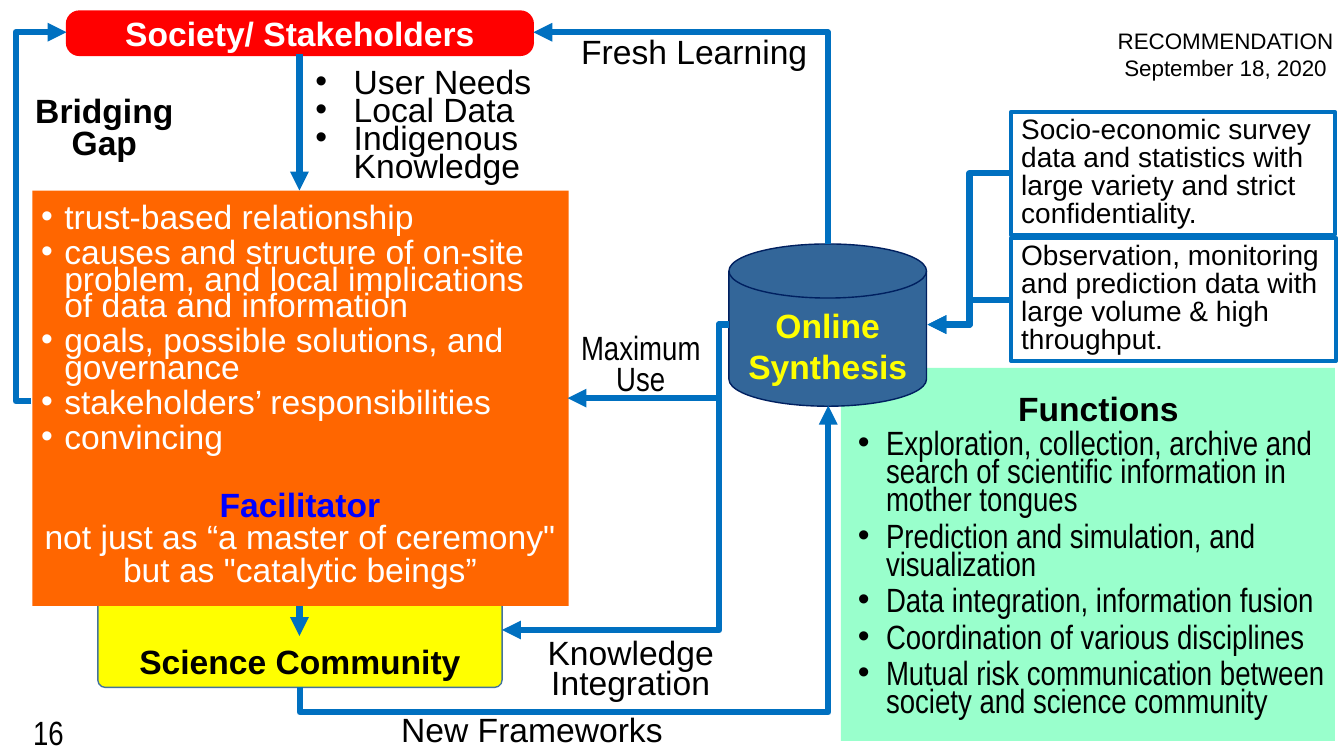
"""Build the slide on how society, science and online synthesis are connected by a facilitator."""
from dataclasses import dataclass
from typing import Optional

from lxml.etree import SubElement
from pptx import Presentation
from pptx.dml.color import RGBColor
from pptx.enum.shapes import MSO_CONNECTOR, MSO_SHAPE
from pptx.enum.text import MSO_ANCHOR, MSO_AUTO_SIZE, PP_ALIGN
from pptx.oxml.ns import qn
from pptx.util import Pt

EMU_PER_PX = 9144
COLORS = {
    "black": "000000", "white": "FFFFFF", "red": "FF0000", "yellow": "FFFF00",
    "orange": "FF6600", "mint": "99FFCC", "steel": "336699", "navy": "002060",
    "slate": "43739E", "arrow": "0070C0", "blue": "0000FF",
}
Frame = tuple[int, int, int, int]


@dataclass
class Line:
    text: str
    spacing: Optional[float] = None
    color: str = "black"
    bold: bool = False
    font: str = "Arial"
    size: int = 24
    align: PP_ALIGN = PP_ALIGN.CENTER
    indent: int = 0
    before: float = 0
    after: float = 0


@dataclass
class Panel:
    frame: Frame
    kind: MSO_SHAPE = MSO_SHAPE.RECTANGLE
    fill: Optional[str] = None
    outline: Optional[str] = None
    width: float = 1
    corner: Optional[float] = None
    lines: tuple[Line, ...] = ()
    anchor: MSO_ANCHOR = MSO_ANCHOR.TOP
    fit: MSO_AUTO_SIZE = MSO_AUTO_SIZE.SHAPE_TO_FIT_TEXT


@dataclass
class Label:
    frame: Frame
    lines: tuple[Line, ...]
    anchor: MSO_ANCHOR = MSO_ANCHOR.TOP
    fit: MSO_AUTO_SIZE = MSO_AUTO_SIZE.SHAPE_TO_FIT_TEXT


@dataclass
class Arrow:
    start: tuple[int, int]
    end: tuple[int, int]
    geometry: str = "bentConnector3"
    bend: Optional[float] = None
    rotation: int = 0
    tip: str = "tailEnd"


def bullets(texts: tuple[str, ...], **style) -> tuple[Line, ...]:
    """Return left-aligned bulleted lines that share one style."""
    return tuple(Line(text, align=PP_ALIGN.LEFT, **style) for text in texts)


def survey_panel(top: int, width: int, text: str) -> Panel:
    """Return an outlined box that describes one source of data."""
    return Panel((1003, top, width, 122), outline="arrow", width=3,
                 lines=(Line(text, 20, size=20, align=PP_ALIGN.LEFT),))


PANELS = (
    Panel((834, 365, 490, 370), fill="mint"),
    Panel((97, 568, 401, 114), MSO_SHAPE.ROUNDED_RECTANGLE, "yellow", "slate", corner=0.065),
    Panel((66, 11, 463, 44), MSO_SHAPE.ROUNDED_RECTANGLE, "red", "red", corner=0.29,
          lines=(Line("Society/ Stakeholders", color="white", bold=True),),
          anchor=MSO_ANCHOR.MIDDLE, fit=MSO_AUTO_SIZE.NONE),
    Panel((723, 242, 196, 161), MSO_SHAPE.FLOWCHART_MAGNETIC_DISK, "steel", "navy"),
    Panel((32, 189, 532, 412), fill="orange"),
    survey_panel(236, 322, "Observation, monitoring and prediction data with large volume "
                           "& high throughput."),
    survey_panel(111, 321, "Socio-economic survey data and statistics with large variety "
                           "and strict confidentiality."),
)

ARROWS = (
    Arrow((723, 322), (498, 625), bend=0.043),
    Arrow((699, 804), (420, 280), bend=-0.09, rotation=90),
    Arrow((529, 32), (821, 242), "bentConnector2", tip="headEnd"),
    Arrow((723, 322), (563, 395), bend=0.062),
    Arrow((1003, 298), (920, 322), bend=0.5),
    Arrow((1003, 172), (920, 322), bend=0.5),
    Arrow((31, 398), (66, 32), bend=-0.44),
    Arrow((297, 601), (297, 631), "line"),
    Arrow((297, 54), (297, 189), "line"),
)

FUNCTIONS = (
    "Exploration, collection, archive and search of scientific information in mother tongues",
    "Prediction and simulation, and visualization",
    "Data integration, information fusion",
    "Coordination of various disciplines",
    "Mutual risk communication between society and science community",
)
FACILITATION = (
    "trust-based relationship",
    "causes and structure of on-site problem, and local implications of data and information",
    "goals, possible solutions, and governance",
    "stakeholders’ responsibilities",
    "convincing",
)
NEEDS = ("User Needs", "Local Data", "Indigenous Knowledge")

LABELS = (
    Label((841, 392, 497, 331), (
        Line("Functions", 20, bold=True, after=4.5),
        *bullets(FUNCTIONS, spacing=20, font="Arial Narrow", indent=28, after=6))),
    Label((12, 92, 183, 75), (Line("Bridging Gap", 23, bold=True),)),
    Label((528, 631, 195, 72), (Line("Knowledge Integration", 22),)),
    Label((303, 68, 252, 123), bullets(NEEDS, spacing=20, indent=38)),
    Label((303, 721, 449, 31), (Line("New Frameworks", 12.8),)),
    Label((555, 41, 267, 37), (Line("Fresh Learning", 18),)),
    Label((97, 631, 401, 50), (Line("Science Community", bold=True),)),
    Label((559, 329, 153, 72), tuple(
        Line(word, 22, font="Arial Narrow") for word in ("Maximum", "Use"))),
    Label((31, 203, 533, 390), (
        *bullets(FACILITATION, spacing=19, color="white", indent=23, after=6),
        Line("Facilitator", 23, "blue", True, before=20),
        Line("not just as “a master of ceremony\"", 23, "white"),
        Line("but as \"catalytic beings”", 23, "white"))),
    Label((728, 298, 186, 91), (Line("Online Synthesis", color="yellow", bold=True),)),
    Label((8, 704, 65, 44), (Line("16", font="Arial Narrow", align=PP_ALIGN.RIGHT),),
          MSO_ANCHOR.MIDDLE, MSO_AUTO_SIZE.NONE),
    Label((1098, 22, 235, 64), (Line("RECOMMENDATION September 18, 2020", size=16),)),
)


def emu(lengths: tuple[int, ...]) -> list[int]:
    """Turn px lengths into EMU."""
    return [length * EMU_PER_PX for length in lengths]


def rgb(name: str) -> RGBColor:
    """Look up a named colour."""
    return RGBColor.from_string(COLORS[name])


def apply(target, values: dict) -> None:
    """Set each named attribute on the target."""
    for name, value in values.items():
        setattr(target, name, value)


def write_lines(frame, block) -> None:
    """Fill a text frame with the lines of a panel or label."""
    apply(frame, {"word_wrap": True, "auto_size": block.fit, "vertical_anchor": block.anchor})
    for index, line in enumerate(block.lines):
        paragraph = frame.add_paragraph() if index else frame.paragraphs[0]
        if line.indent:
            properties = paragraph._p.get_or_add_pPr()
            properties.set("marL", str(line.indent * EMU_PER_PX))
            properties.set("indent", str(-line.indent * EMU_PER_PX))
            SubElement(properties, qn("a:buFont"), typeface="Arial")
            SubElement(properties, qn("a:buChar"), char="•")
        apply(paragraph, {
            "alignment": line.align,
            "line_spacing": Pt(line.spacing) if line.spacing else None,
            "space_before": Pt(line.before) if line.before else None,
            "space_after": Pt(line.after),
        })
        run = paragraph.add_run()
        run.text = line.text
        apply(run.font, {"name": line.font, "size": Pt(line.size), "bold": line.bold})
        run.font.color.rgb = rgb(line.color)


def draw_panel(slide, panel: Panel) -> None:
    """Draw a filled or outlined shape with its text."""
    shape = slide.shapes.add_shape(panel.kind, *emu(panel.frame))
    shape.shadow.inherit = False
    for part, color in ((shape.fill, panel.fill), (shape.line.fill, panel.outline)):
        if color:
            part.solid()
            part.fore_color.rgb = rgb(color)
        else:
            part.background()
    if panel.outline:
        shape.line.width = Pt(panel.width)
    if panel.corner is not None:
        shape.adjustments[0] = panel.corner
    if panel.lines:
        write_lines(shape.text_frame, panel)


def draw_arrow(slide, arrow: Arrow) -> None:
    """Draw a straight or bent connector with one triangular tip."""
    connector = slide.shapes.add_connector(MSO_CONNECTOR.ELBOW, *emu(arrow.start + arrow.end))
    connector.line.color.rgb = rgb("arrow")
    connector.line.width = Pt(4.5)
    properties = connector._element.spPr
    geometry = properties.find(qn("a:prstGeom"))
    geometry.set("prst", arrow.geometry)
    if arrow.bend is not None:
        SubElement(geometry.find(qn("a:avLst")), qn("a:gd"), name="adj1",
                   fmla=f"val {round(arrow.bend * 100000)}")
    if arrow.rotation:
        properties.find(qn("a:xfrm")).set("rot", str(arrow.rotation * 60000))
    SubElement(properties.find(qn("a:ln")), qn(f"a:{arrow.tip}"), type="triangle")
    SubElement(properties, qn("a:effectLst"))


def main() -> None:
    """Build and save the slide."""
    deck = Presentation()
    deck.slide_width, deck.slide_height = emu((1333, 750))
    slide = deck.slides.add_slide(deck.slide_layouts[6])
    for panel in PANELS:
        draw_panel(slide, panel)
    for arrow in ARROWS:
        draw_arrow(slide, arrow)
    for label in LABELS:
        write_lines(slide.shapes.add_textbox(*emu(label.frame)).text_frame, label)
    deck.save("out.pptx")


if __name__ == "__main__":
    main()
